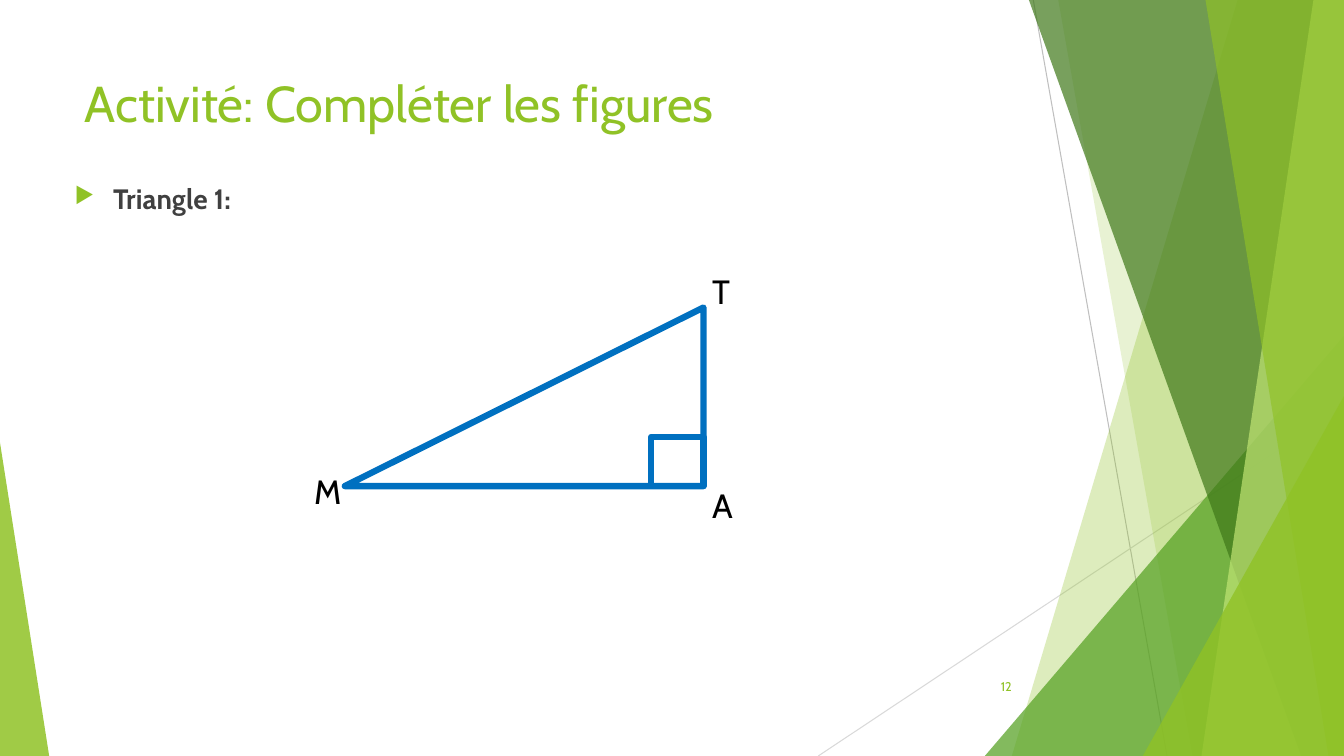
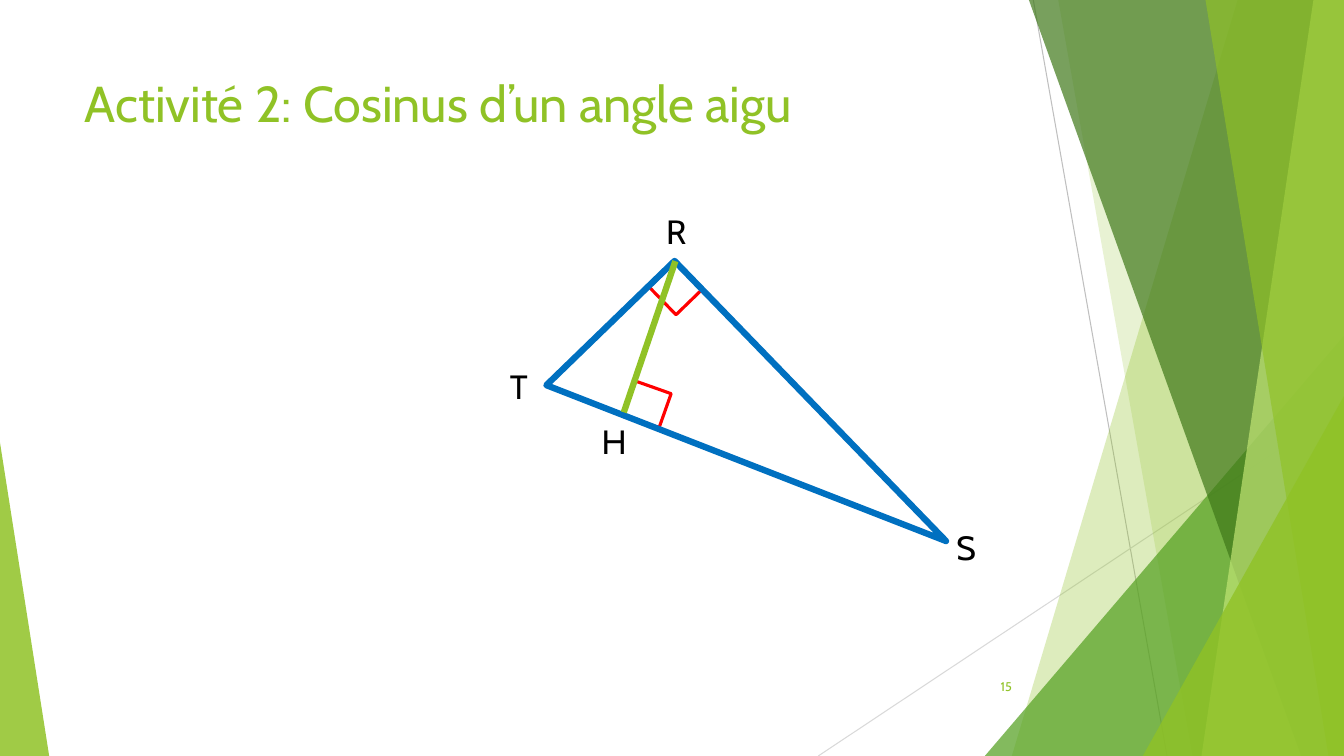
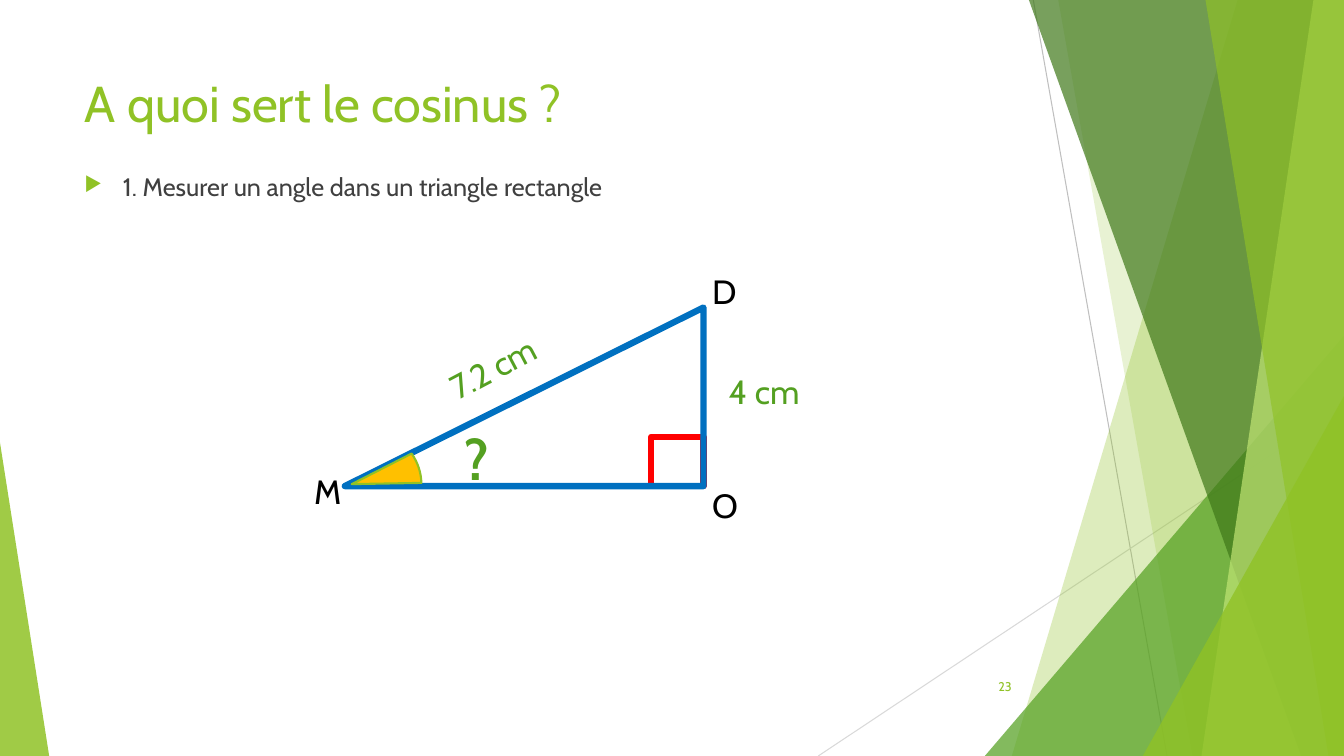
"""Build three geometry slides on the cosine of an acute angle."""
from dataclasses import dataclass
from typing import Any

from lxml import etree
from pptx import Presentation
from pptx.dml.color import RGBColor
from pptx.enum.shapes import MSO_CONNECTOR, MSO_SHAPE
from pptx.enum.text import MSO_ANCHOR, MSO_AUTO_SIZE, PP_ALIGN
from pptx.oxml.ns import qn
from pptx.util import Cm, Pt

STRAIGHT = MSO_CONNECTOR.STRAIGHT
TRIANGLE, RECTANGLE, PIE = MSO_SHAPE.ISOSCELES_TRIANGLE, MSO_SHAPE.RECTANGLE, MSO_SHAPE.PIE
TOP, MIDDLE = MSO_ANCHOR.TOP, MSO_ANCHOR.MIDDLE
LEFT, RIGHT = PP_ALIGN.LEFT, PP_ALIGN.RIGHT
FIXED, GROW = MSO_AUTO_SIZE.NONE, MSO_AUTO_SIZE.SHAPE_TO_FIT_TEXT
TITLE_ONLY = 5
WIDTH, HEIGHT = 33.87, 19.05


@dataclass(frozen=True)
class Theme:
    """Colours, font and type sizes of the deck."""
    font: str = "Cabin"
    lime: str = "90C226"
    pale: str = "C0E474"
    green: str = "54A021"
    forest: str = "3F7819"
    body: str = "404040"
    black: str = "000000"
    blue: str = "0070C0"
    red: str = "FF0000"
    amber: str = "FFC000"
    grey: str = "BFBFBF"
    light_grey: str = "D9D9D9"
    title_size: int = 36
    label_size: int = 24
    question_size: int = 40
    number_size: int = 9
    side_width: float = 4.5
    mark_width: float = 2.25
    arc_width: float = 1.5
    hairline: float = 0.75


THEME = Theme()


@dataclass(frozen=True)
class Box:
    """Place and turn of an element, in centimetres and degrees."""
    left: float
    top: float
    width: float
    height: float
    turn: float = 0

    def lengths(self) -> tuple:
        """Return left, top, width and height as lengths."""
        return Cm(self.left), Cm(self.top), Cm(self.width), Cm(self.height)


@dataclass(frozen=True)
class Segment:
    """Straight line between two points."""
    start: tuple[float, float]
    end: tuple[float, float]
    color: str
    width: float


@dataclass(frozen=True)
class Band:
    """Full-height band from a slanted left edge to the slide's right edge."""
    top_x: float
    bottom_x: float
    color: str
    alpha: int


@dataclass(frozen=True)
class Corner:
    """Translucent triangle standing on the slide's bottom edge."""
    left: float
    width: float
    height: float
    apex: int
    color: str
    alpha: int


@dataclass(frozen=True)
class Figure:
    """Outlined preset shape of a drawing."""
    preset: Any
    box: Box
    color: str
    width: float
    adjustments: tuple[float, ...] = ()
    fill: str | None = None


@dataclass(frozen=True)
class Label:
    """Short text written on a drawing."""
    text: str
    box: Box
    color: str = THEME.black
    size: int = THEME.label_size
    bold: bool = False


@dataclass(frozen=True)
class Bullet:
    """Bulleted statement under the title."""
    text: str
    box: Box
    size: int
    bold: bool = False


@dataclass(frozen=True)
class Page:
    """Content of one slide."""
    title: str
    number: int
    drawing: tuple
    bullet: Bullet | None = None


BACKDROP = (
    Segment((26.04, 0), (29.41, HEIGHT), THEME.grey, THEME.hairline),
    Segment((WIDTH, 10.24), (20.62, HEIGHT), THEME.light_grey, THEME.hairline),
    Band(31.19, 25.5, THEME.lime, 30),
    Band(26.67, 30.05, THEME.lime, 20),
    Corner(24.82, 9.05, 10.59, 1, THEME.green, 72),
    Band(25.93, 32.79, THEME.forest, 70),
    Band(33.1, 30.28, THEME.pale, 70),
    Band(30.38, 33.48, THEME.lime, 65),
    Corner(28.8, 5.07, 9.07, 1, THEME.lime, 80),
    Corner(0, 1.24, 7.9, 0, THEME.lime, 85),
)
TITLE_BOX = Box(1.88, 1.7, 23.88, 3.66)
NUMBER_BOX = Box(23.85, 16.79, 1.9, 1.02)
BULLET_INDENT = 0.97


def apply(target: Any, values: dict[str, Any]) -> None:
    """Set every attribute named in values on target."""
    for name, value in values.items():
        setattr(target, name, value)


def write(shape: Any, text: str, color: str, size: int, bold: bool = False,
          anchor: Any = TOP, align: Any = LEFT, fit: Any = FIXED) -> Any:
    """Write one formatted paragraph into shape and return it."""
    apply(shape.text_frame, {"text": text, "word_wrap": True, "auto_size": fit,
                             "vertical_anchor": anchor})
    paragraph = shape.text_frame.paragraphs[0]
    paragraph.alignment = align
    font = paragraph.runs[0].font
    apply(font, {"name": THEME.font, "size": Pt(size), "bold": bold})
    font.color.rgb = RGBColor.from_string(color)
    return paragraph


def paint_line(line: Any, color: str, width: float) -> None:
    """Give a line its colour and width."""
    line.color.rgb = RGBColor.from_string(color)
    line.width = Pt(width)


def paint_glass(shape: Any, color: str, alpha: int) -> None:
    """Give shape a translucent fill with no line or shadow."""
    shape.shadow.inherit = False
    shape.line.fill.background()
    shape.fill.solid()
    shape.fill.fore_color.rgb = RGBColor.from_string(color)
    tint = shape.element.spPr.find(".//" + qn("a:srgbClr"))
    etree.SubElement(tint, qn("a:alpha"), val=str(alpha * 1000))


def draw_segment(slide: Any, segment: Segment) -> None:
    """Draw a straight line without shadow."""
    ends = [Cm(value) for value in segment.start + segment.end]
    connector = slide.shapes.add_connector(STRAIGHT, *ends)
    paint_line(connector.line, segment.color, segment.width)
    etree.SubElement(connector.element.spPr, qn("a:effectLst"))


def draw_band(slide: Any, band: Band) -> None:
    """Draw a slanted band of the backdrop."""
    outline = slide.shapes.build_freeform(Cm(band.top_x), Cm(0))
    corners = ((WIDTH, 0), (WIDTH, HEIGHT), (band.bottom_x, HEIGHT))
    outline.add_line_segments([(Cm(x), Cm(y)) for x, y in corners], close=True)
    paint_glass(outline.convert_to_shape(), band.color, band.alpha)


def draw_corner(slide: Any, corner: Corner) -> None:
    """Draw a corner triangle of the backdrop."""
    box = Box(corner.left, HEIGHT - corner.height, corner.width, corner.height)
    wedge = slide.shapes.add_shape(TRIANGLE, *box.lengths())
    wedge.adjustments[0] = corner.apex
    paint_glass(wedge, corner.color, corner.alpha)


def draw_figure(slide: Any, figure: Figure) -> None:
    """Draw an outlined shape, filled only if it names a fill."""
    shape = slide.shapes.add_shape(figure.preset, *figure.box.lengths())
    shape.rotation = figure.box.turn
    shape.shadow.inherit = False
    for index, value in enumerate(figure.adjustments):
        shape.adjustments[index] = value
    paint_line(shape.line, figure.color, figure.width)
    if figure.fill:
        shape.fill.solid()
        shape.fill.fore_color.rgb = RGBColor.from_string(figure.fill)
    else:
        shape.fill.background()


def draw_label(slide: Any, label: Label) -> None:
    """Write a label of the drawing."""
    caption = slide.shapes.add_textbox(*label.box.lengths())
    caption.rotation = label.box.turn
    write(caption, label.text, label.color, label.size, label.bold, fit=GROW)


def draw_bullet(slide: Any, bullet: Bullet) -> None:
    """Write a statement with a hanging arrow bullet."""
    statement = slide.shapes.add_textbox(*bullet.box.lengths())
    paragraph = write(statement, bullet.text, THEME.body, bullet.size, bullet.bold)
    paragraph.space_before = Pt(10)
    properties = paragraph._p.get_or_add_pPr()
    indent = Cm(BULLET_INDENT)
    properties.set("marL", str(indent))
    properties.set("indent", str(-indent))
    tint = etree.SubElement(properties, qn("a:buClr"))
    etree.SubElement(tint, qn("a:srgbClr"), val=THEME.lime)
    etree.SubElement(properties, qn("a:buSzPct"), val="80000")
    etree.SubElement(properties, qn("a:buChar"), char="▶")


DRAWERS = {Segment: draw_segment, Band: draw_band, Corner: draw_corner,
           Figure: draw_figure, Label: draw_label, Bullet: draw_bullet}


def draw_all(slide: Any, elements: tuple) -> None:
    """Draw elements from back to front."""
    for element in elements:
        DRAWERS[type(element)](slide, element)


def vertex(name: str, left: float, top: float) -> Label:
    """Return the label of a vertex."""
    return Label(name, Box(left, top, 1.37, 1.27))


def right_triangle(summit: str, corner: str, mark_color: str) -> tuple:
    """Return a triangle from M with its right angle at the lower right."""
    sides = Box(8.69, 7.75, 9.04, 4.5)
    width, height = 1.32, 1.24
    mark = Box(sides.left + sides.width - width, sides.top + sides.height - height,
               width, height)
    return (
        Figure(RECTANGLE, mark, mark_color, THEME.side_width),
        Figure(TRIANGLE, sides, THEME.blue, THEME.side_width, (1,)),
        vertex(corner, 17.7, 12.09),
        vertex(summit, 17.7, 6.71),
        vertex("M", 7.67, 11.73),
    )


def angle_mark(left: float, top: float, turn: float) -> Figure:
    """Return a small red right-angle mark."""
    return Figure(RECTANGLE, Box(left, top, 0.97, 0.91, turn), THEME.red, THEME.mark_width)


PAGES = (
    Page("Activité: Compléter les figures", 12,
         right_triangle("T", "A", THEME.blue),
         Bullet("Triangle 1:", Box(1.63, 4.45, 23.88, 10.77), 20, True)),
    Page("Activité 2: Cosinus d’un angle aigu", 15, (
        angle_mark(15.82, 9.73, 199.5),
        angle_mark(16.54, 6.81, 225.9),
        Figure(TRIANGLE, Box(13.89, 9.42, 9.83, 4.5, 225.9), THEME.blue,
               THEME.side_width, (1,)),
        Segment((17.02, 6.58), (15.72, 10.39), THEME.lime, THEME.side_width),
        vertex("T", 12.6, 9.09),
        vertex("R", 16.54, 5.18),
        vertex("H", 14.91, 10.49),
        vertex("S", 23.85, 13.16),
    )),
    Page("A quoi sert le cosinus ?", 23, right_triangle("D", "O", THEME.red) + (
        Label("7.2 cm", Box(10.9, 8.18, 4.72, 1.27, 332.2), THEME.green),
        Label("4 cm", Box(18.11, 9.22, 2.72, 1.27), THEME.green),
        Figure(PIE, Box(7.11, 10.69, 3.51, 3.02), THEME.lime, THEME.arc_width,
               (333 * 0.6, 359 * 0.6), THEME.amber),
        Label("?", Box(11.46, 10.57, 4.72, 1.96), THEME.green, THEME.question_size, True),
    ), Bullet("1. Mesurer un angle dans un triangle rectangle",
              Box(1.88, 4.19, 23.88, 11.84), 18)),
)


def add_page(deck: Any, page: Page) -> None:
    """Add one slide with backdrop, title, number and content."""
    slide = deck.slides.add_slide(deck.slide_layouts[TITLE_ONLY])
    draw_all(slide, BACKDROP)
    title = slide.shapes.title
    apply(title, dict(zip(("left", "top", "width", "height"), TITLE_BOX.lengths())))
    write(title, page.title, THEME.lime, THEME.title_size)
    if page.bullet:
        draw_bullet(slide, page.bullet)
    number = slide.shapes.add_textbox(*NUMBER_BOX.lengths())
    write(number, str(page.number), THEME.lime, THEME.number_size,
          anchor=MIDDLE, align=RIGHT)
    draw_all(slide, page.drawing)


def main() -> None:
    """Build and save the deck."""
    deck = Presentation()
    apply(deck, {"slide_width": Cm(WIDTH), "slide_height": Cm(HEIGHT)})
    for page in PAGES:
        add_page(deck, page)
    deck.save("out.pptx")


if __name__ == "__main__":
    main()
